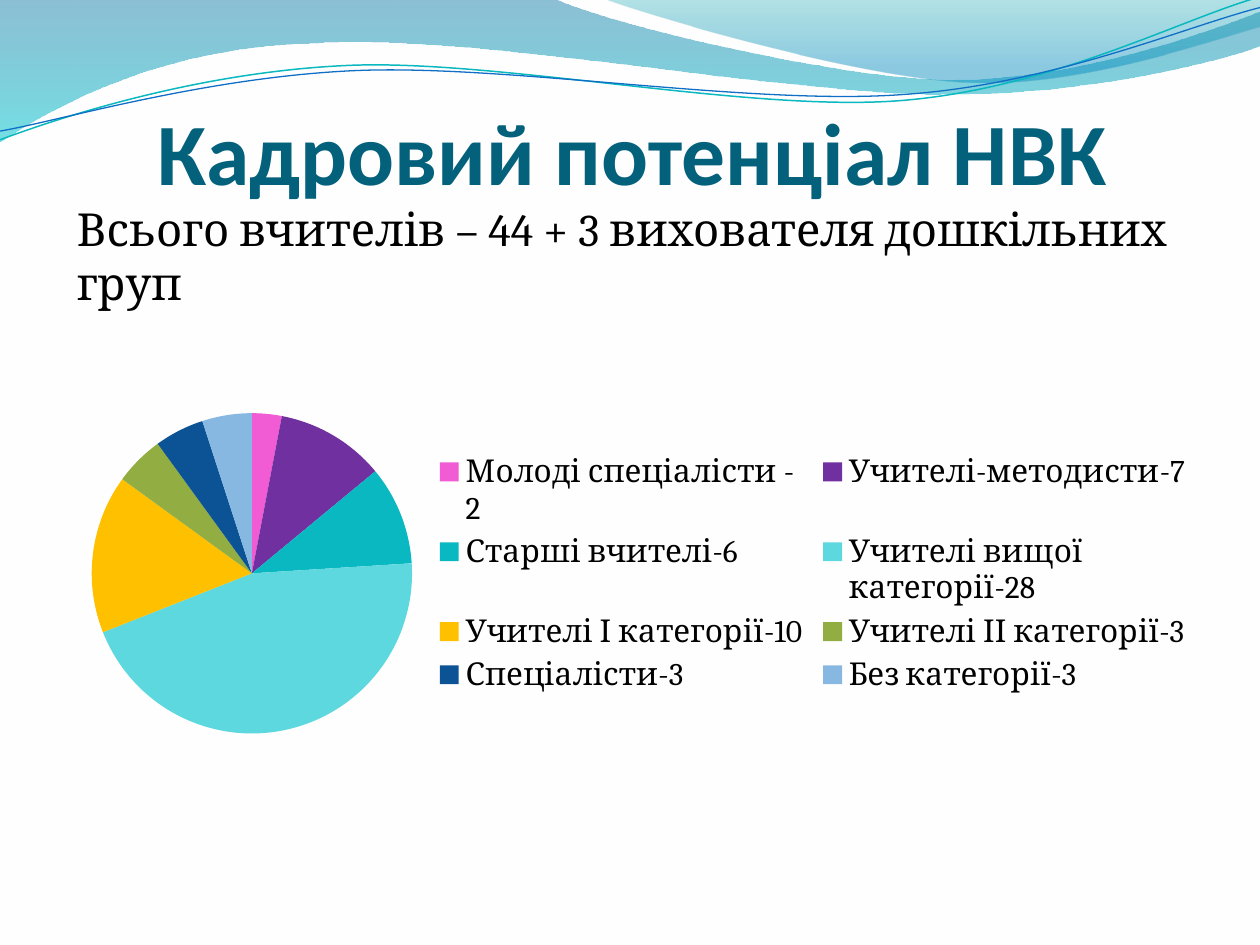
import pptx
import pptx.chart.data
import pptx.dml.color
import pptx.enum.chart
import pptx.enum.text
import pptx.oxml
import pptx.oxml.ns
import pptx.util
from pptx.dml.color import RGBColor
from pptx.util import Pt

# Content
TITLE = "Кадровий потенціал НВК"
SUMMARY = "Всього вчителів – 44 + 3 вихователя дошкільних груп"
STAFF = [
    ("Молоді спеціалісти - 2", 3, RGBColor(0xF1, 0x5B, 0xD4)),
    ("Учителі-методисти-7", 11, RGBColor(0x70, 0x30, 0xA0)),
    ("Старші вчителі-6", 10, RGBColor(0x0A, 0xB8, 0xC1)),
    ("Учителі вищої категорії-28", 45, RGBColor(0x5C, 0xD8, 0xDE)),
    ("Учителі І категорії-10", 16, RGBColor(0xFF, 0xC0, 0x00)),
    ("Учителі ІІ категорії-3", 5, RGBColor(0x92, 0xAD, 0x42)),
    ("Спеціалісти-3", 5, RGBColor(0x0B, 0x53, 0x94)),
    ("Без категорії-3", 5, RGBColor(0x87, 0xB8, 0xE2)),
]

BACKGROUND = RGBColor(0xFF, 0xFE, 0xFF)
BLACK = RGBColor(0, 0, 0)
TITLE_COLOR = RGBColor(0x04, 0x61, 0x7B)
TEAL_LINE = RGBColor(0x0A, 0xB8, 0xBF)
BLUE_LINE = RGBColor(0x0F, 0x6F, 0xC6)

# Wave outlines in points: two values are a line end, six are a Bezier curve.
# Gradient stops are (position, colour, opacity in percent).
BANDS = [
    ([(0, 0), (316.8, -0.7),
      (342.7, 12.2, 478.1, 45.4, 545.8, 45.4),
      (614.2, 45.4, 689.8, 18.7, 720, 6.5), (720.7, 25.9),
      (707.8, 31.7, 626.4, 54.7, 537.1, 54),
      (447.8, 54, 275, 20.2, 185, 24.5),
      (92.9, 25.9, 33.1, 59.8, -0.7, 81.4)],
     [(0, RGBColor(0x00, 0x74, 0xA1), 45), (1, RGBColor(0x00, 0xC6, 0xCF), 55)]),
    ([(344.9, -0.7),
      (366.5, 7.9, 491, 44.6, 553.7, 46.8),
      (616.3, 49.7, 691.9, 23, 720, 15.1), (720, 0)],
     [(0, RGBColor(0x00, 0xA1, 0xA9), 30), (0.8, RGBColor(0x00, 0x8B, 0xBF), 45)]),
]
RIPPLES = [
    ([(0, 79.9),
      (34.6, 67, 113.8, 41, 199.4, 37.4),
      (284.4, 33.8, 427, 64.1, 513.4, 57.6),
      (599.8, 51.1, 675.4, 10.8, 718.6, -1.4)], TEAL_LINE, 0.85),
    ([(0, 74.9),
      (33.8, 69.1, 118.1, 43.9, 203.8, 40.3),
      (290.2, 36.7, 429.8, 60.5, 516.2, 54),
      (601.9, 48.2, 677.5, 15.1, 720, 4.3)], BLUE_LINE, 0.75),
]


def add_outline(slide, segments, close):
    """Build a freeform through the end points, then bend its curved segments."""
    points = [(Pt(segment[-2]), Pt(segment[-1])) for segment in segments]
    builder = slide.shapes.build_freeform(*points[0])
    builder.add_line_segments(points[1:], close=close)
    shape = builder.convert_to_shape()
    shape.shadow.inherit = False
    lines = list(shape._element.iter(pptx.oxml.ns.qn("a:lnTo")))
    for line, segment in zip(lines, segments[1:]):
        if len(segment) == 6:
            controls = "".join(
                f'<a:pt x="{Pt(x) - shape.left}" y="{Pt(y) - shape.top}"/>'
                for x, y in zip(segment[::2], segment[1::2]))
            line.getparent().replace(line, pptx.oxml.parse_xml(
                f"<a:cubicBezTo {pptx.oxml.ns.nsdecls('a')}>{controls}</a:cubicBezTo>"))
    return shape


def write_text(shape, text, box, *, size, font, color, bold=False,
               align=pptx.enum.text.PP_ALIGN.LEFT,
               anchor=pptx.enum.text.MSO_ANCHOR.TOP, insets=(7.2, 3.6, 7.2, 3.6)):
    shape.left, shape.top, shape.width, shape.height = map(Pt, box)
    frame = shape.text_frame
    frame.text = text
    frame.word_wrap = True
    frame.auto_size = pptx.enum.text.MSO_AUTO_SIZE.NONE
    frame.vertical_anchor = anchor
    (frame.margin_left, frame.margin_top,
     frame.margin_right, frame.margin_bottom) = map(Pt, insets)
    paragraph = frame.paragraphs[0]
    properties = paragraph._p.get_or_add_pPr()
    properties.set("marL", "0")
    properties.set("indent", "0")
    paragraph.space_before = Pt(0)
    properties.append(pptx.oxml.parse_xml(
        f"<a:buNone {pptx.oxml.ns.nsdecls('a')}/>"))
    paragraph.alignment = align
    paragraph.font.size = Pt(size)
    paragraph.font.name = font
    paragraph.font.bold = bold
    paragraph.font.color.rgb = color


presentation = pptx.Presentation()
presentation.slide_width, presentation.slide_height = Pt(720), Pt(540)
slide = presentation.slides.add_slide(presentation.slide_layouts[1])
slide.background.fill.solid()
slide.background.fill.fore_color.rgb = BACKGROUND

# Wave decoration
for segments, stops in BANDS:
    band = add_outline(slide, segments, close=True)
    band.line.fill.background()
    band.fill.gradient()
    band.fill.gradient_angle = 270
    for stop, (position, color, _) in zip(band.fill.gradient_stops, stops):
        stop.position = position
        stop.color.rgb = color
    for element, (_, _, opacity) in zip(
            band._element.spPr.iter(pptx.oxml.ns.qn("a:srgbClr")), stops):
        element.append(pptx.oxml.parse_xml(
            f"<a:alpha {pptx.oxml.ns.nsdecls('a')} val=\"{opacity * 1000}\"/>"))
for segments, color, width in RIPPLES:
    ripple = add_outline(slide, segments, close=False)
    ripple.fill.background()
    ripple.line.color.rgb = color
    ripple.line.width = Pt(width)

# Title and summary
write_text(slide.shapes.title, TITLE, (37.4, 25.9, 648, 90), size=50, font="Calibri",
           color=TITLE_COLOR, bold=True, align=pptx.enum.text.PP_ALIGN.CENTER,
           anchor=pptx.enum.text.MSO_ANCHOR.BOTTOM, insets=(0, 3.6, 0, 0))
write_text(slide.placeholders[1], SUMMARY, (36.7, 111.2, 648, 39.6), size=26,
           font="Cambria", color=BLACK)

# Staff pie with its legend on the right
chart_data = pptx.chart.data.CategoryChartData()
chart_data.categories = [label for label, _, _ in STAFF]
chart_data.add_series("Series 1", [value for _, value, _ in STAFF])
chart = slide.shapes.add_chart(
    pptx.enum.chart.XL_CHART_TYPE.PIE, Pt(42.5), Pt(167.8), Pt(646.6), Pt(319.7),
    chart_data).chart
chart.has_title = False
chart.font.size = Pt(18)
chart.font.name = "Cambria"
chart.font.color.rgb = BLACK
chart.has_legend = True
chart.legend.position = pptx.enum.chart.XL_LEGEND_POSITION.RIGHT
chart.legend.include_in_layout = False
plot = chart.plots[0]
plot.vary_by_categories = True
for index, (_, _, color) in enumerate(STAFF):
    fill = plot.series[0].points[index].format.fill
    fill.solid()
    fill.fore_color.rgb = color

presentation.save("out.pptx")
